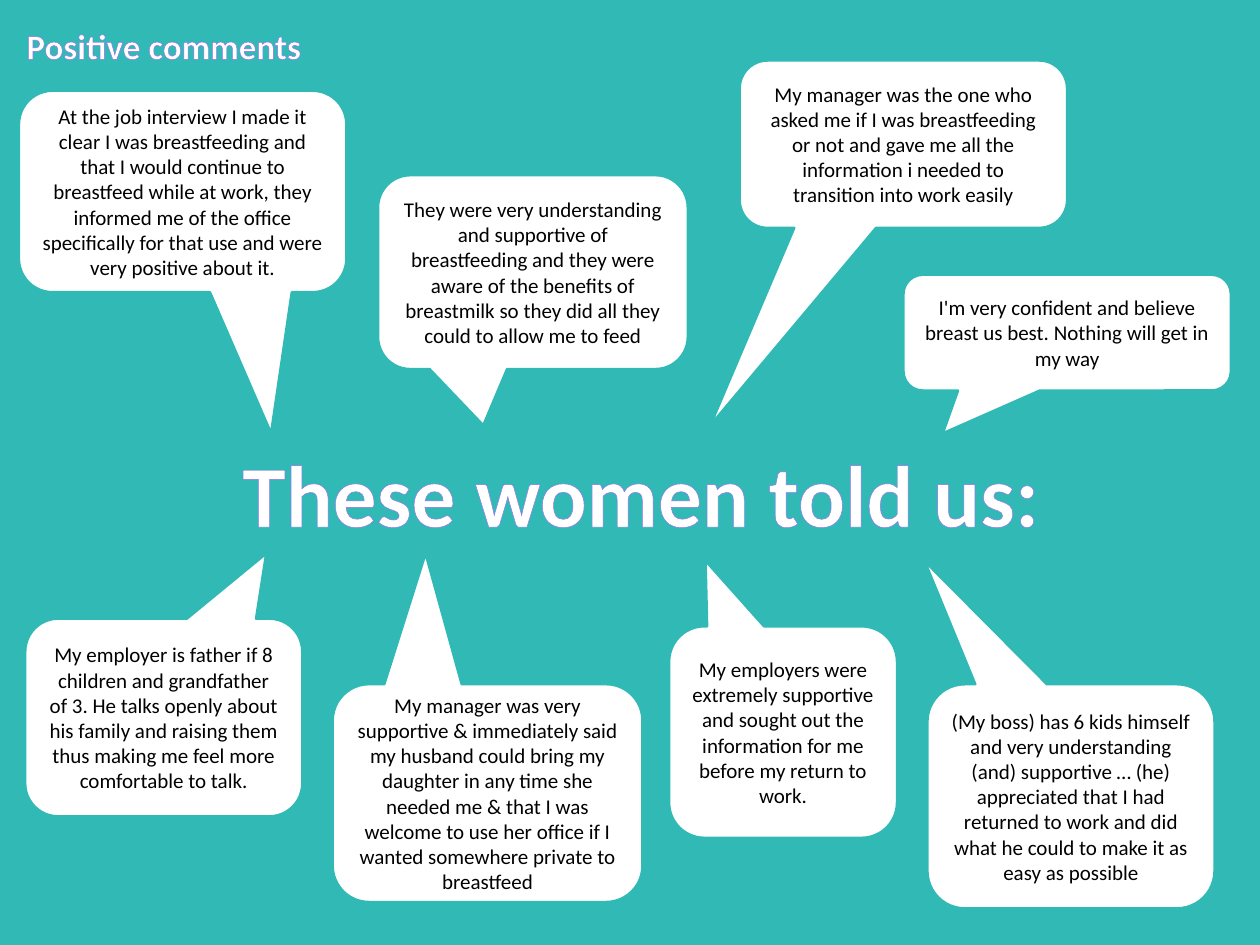
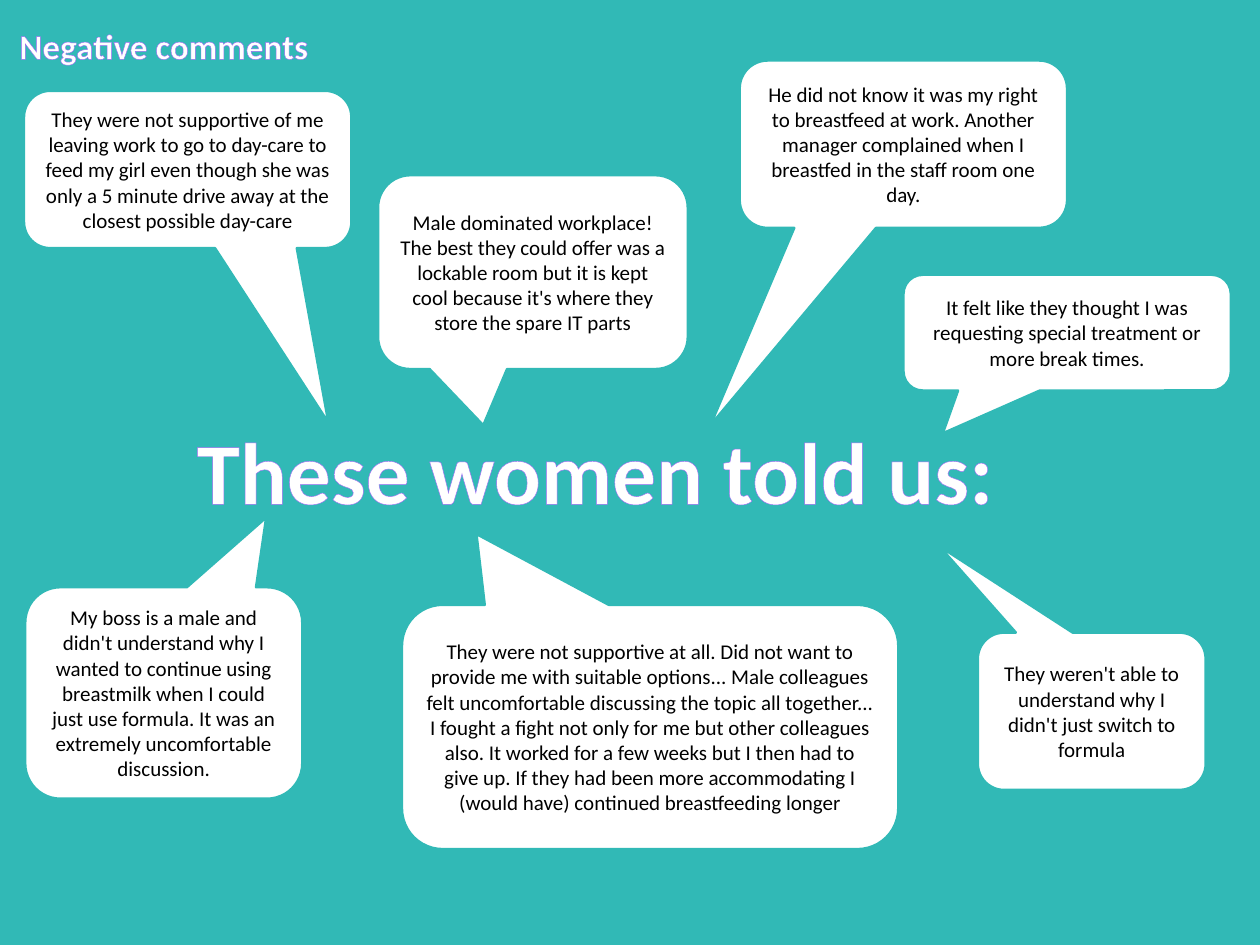
from dataclasses import dataclass

from lxml import etree
from pptx import Presentation
from pptx.dml.color import RGBColor
from pptx.enum.shapes import MSO_SHAPE
from pptx.enum.text import MSO_ANCHOR, MSO_AUTO_SIZE, PP_ALIGN
from pptx.oxml.ns import qn
from pptx.util import Inches, Pt

CALLOUT = MSO_SHAPE.ROUNDED_RECTANGULAR_CALLOUT
MIDDLE = MSO_ANCHOR.MIDDLE
NO_AUTOFIT = MSO_AUTO_SIZE.NONE
LEFT, CENTER = PP_ALIGN.LEFT, PP_ALIGN.CENTER

COLUMNS, ROWS = 100, 75
TITLE_ONLY = 5


@dataclass(frozen=True)
class Theme:
    """Colours, font and type sizes of the deck."""
    background: str = "31B9B6"
    light: str = "FFFFFF"
    ink: str = "000000"
    outline: str = "9B6BF2"
    font: str = "Calibri"
    title_size: float = 50
    label_size: float = 20
    quote_size: float = 12
    outline_width: float = 0.8
    border_width: float = 1.5
    corner: float = 0.167


class CommentDeck:
    """Builds slides of speech bubbles on a grid of columns and rows."""

    def __init__(self, theme):
        """Open the presentation and colour its master."""
        self.theme = theme
        self.presentation = Presentation()
        self.presentation.slide_width = Inches(10)
        self.presentation.slide_height = Inches(7.5)
        self.slide = None
        self.paint(self.presentation.slide_master.background.fill, theme.background)

    def paint(self, fill, color):
        """Give a fill one solid colour."""
        fill.solid()
        fill.fore_color.rgb = RGBColor.from_string(color)

    def place(self, area):
        """Turn columns and rows into left, top, width and height."""
        column = self.presentation.slide_width / COLUMNS
        row = self.presentation.slide_height / ROWS
        return [round(cells * unit) for cells, unit in zip(area, (column, row) * 2)]

    def set_text(self, shape, text, size, color, bold=False, alignment=CENTER):
        """Set the only paragraph of a shape, centred in its height."""
        frame = shape.text_frame
        frame.auto_size = NO_AUTOFIT
        frame.word_wrap = True
        frame.vertical_anchor = MIDDLE
        paragraph = frame.paragraphs[0]
        paragraph.text = text
        paragraph.alignment = alignment
        font = paragraph.font
        font.name = self.theme.font
        font.size = Pt(size)
        font.bold = bold
        font.color.rgb = RGBColor.from_string(color)
        return paragraph

    def set_heading(self, shape, text, size, alignment=CENTER):
        """Set bold light text with a thin coloured outline."""
        paragraph = self.set_text(shape, text, size, self.theme.light, True, alignment)
        properties = paragraph.runs[0]._r.get_or_add_rPr()
        line = etree.Element(qn("a:ln"), w=str(Pt(self.theme.outline_width)))
        fill = etree.SubElement(line, qn("a:solidFill"))
        etree.SubElement(fill, qn("a:srgbClr"), val=self.theme.outline)
        properties.insert(0, line)

    def add_slide(self, title, area, alignment):
        """Start a slide and place its title."""
        layout = self.presentation.slide_layouts[TITLE_ONLY]
        self.slide = self.presentation.slides.add_slide(layout)
        shape = self.slide.shapes.title
        shape.left, shape.top, shape.width, shape.height = self.place(area)
        self.set_heading(shape, title, self.theme.title_size, alignment)

    def add_label(self, text, area):
        """Add the small heading in the corner."""
        shape = self.slide.shapes.add_textbox(*self.place(area))
        self.set_heading(shape, text, self.theme.label_size)

    def add_bubble(self, text, area, tip):
        """Add a quote whose tail tip is given in shares of the bubble's size."""
        shape = self.slide.shapes.add_shape(CALLOUT, *self.place(area))
        shape.shadow.inherit = False
        for index, value in enumerate((*tip, self.theme.corner)):
            shape.adjustments[index] = value
        self.paint(shape.fill, self.theme.light)
        self.paint(shape.line.fill, self.theme.background)
        shape.line.width = Pt(self.theme.border_width)
        self.set_text(shape, text, self.theme.quote_size, self.theme.ink)


TITLE = "These women told us:"
LABEL_AREA = (-1.5, 0.1, 29, 7)
UPPER_MIDDLE = ((30, 13.9, 24.6, 15.4), (-0.16, 0.79))
UPPER_RIGHT = ((58.7, 4.8, 26, 13.3), (-0.59, 1.68))
FAR_RIGHT = ((71.7, 21.8, 26, 9.2), (-0.38, 0.87))
LOWER_LEFT_TIP = (0.37, -0.83)

SLIDES = [
    ("Positive comments", (5.9, 32.8, 90, 12.5), CENTER, [
        ("At the job interview I made it clear I was breastfeeding and that I would "
         "continue to breastfeed while at work, they informed me of the office "
         "specifically for that use and were very positive about it.",
         (1.5, 7.2, 26, 16), (0.27, 1.2)),
        ("They were very understanding and supportive of breastfeeding and they were "
         "aware of the benefits of breastmilk so they did all they could to allow me "
         "to feed", *UPPER_MIDDLE),
        ("My manager was the one who asked me if I was breastfeeding or not and gave "
         "me all the information i needed to transition into work easily",
         *UPPER_RIGHT),
        ("My employer is father if 8 children and grandfather of 3. He talks openly "
         "about his family and raising them thus making me feel more comfortable to "
         "talk.", (2, 49.1, 22, 15.7), LOWER_LEFT_TIP),
        ("I'm very confident and believe breast us best. Nothing will get in my way",
         *FAR_RIGHT),
        ("(My boss) has 6 kids himself and very understanding (and) supportive … (he) "
         "appreciated that I had returned to work and did what he could to make it as "
         "easy as possible", (73.6, 54.3, 22.8, 17.8), (-0.51, -1.05)),
        ("My manager was very supportive & immediately said my husband could bring my "
         "daughter in any time she needed me & that I was welcome to use her office "
         "if I wanted somewhere private to breastfeed",
         (26.4, 54.3, 24.6, 17.3), (-0.2, -1.1)),
        ("My employers were extremely supportive and sought out the information for "
         "me before my return to work.",
         (53.1, 49.7, 18.1, 16.8), (-0.34, -0.81)),
    ]),
    ("Negative comments", (14.6, 31, 75.6, 12.5), LEFT, [
        ("They were not supportive of me leaving work to go to day-care to feed my "
         "girl even though she was only a 5 minute drive away at the closest possible "
         "day-care", (1.9, 7.2, 26, 12.5), (0.43, 1.61)),
        ("Male dominated workplace! The best they could offer was a lockable room but "
         "it is kept cool because it's where they store the spare IT parts",
         *UPPER_MIDDLE),
        ("He did not know it was my right to breastfeed at work. Another manager "
         "complained when I breastfed in the staff room one day.", *UPPER_RIGHT),
        ("My boss is a male and didn't understand why I wanted to continue using "
         "breastmilk when I could just use formula. It was an extremely uncomfortable "
         "discussion.", (2, 46.6, 22, 16.8), LOWER_LEFT_TIP),
        ("It felt like they thought I was requesting special treatment or more break "
         "times.", *FAR_RIGHT),
        ("They were not supportive at all. Did not want to provide me with suitable "
         "options... Male colleagues felt uncomfortable discussing the topic all "
         "together... I fought a fight not only for me but other colleagues also. It "
         "worked for a few weeks but I then had to give up. If they had been more "
         "accommodating I (would have) continued breastfeeding longer",
         (31.9, 48, 39.4, 19.4), (-0.35, -0.79)),
        ("They weren't able to understand why I didn't just switch to formula",
         (77.6, 50.2, 18.1, 12.5), (-0.67, -1.05)),
    ]),
]


def main():
    """Build both comment slides and save them."""
    deck = CommentDeck(Theme())
    for label, title_area, alignment, bubbles in SLIDES:
        deck.add_slide(TITLE, title_area, alignment)
        for text, area, tip in bubbles:
            deck.add_bubble(text, area, tip)
        deck.add_label(label, LABEL_AREA)
    deck.presentation.save("out.pptx")


if __name__ == "__main__":
    main()
